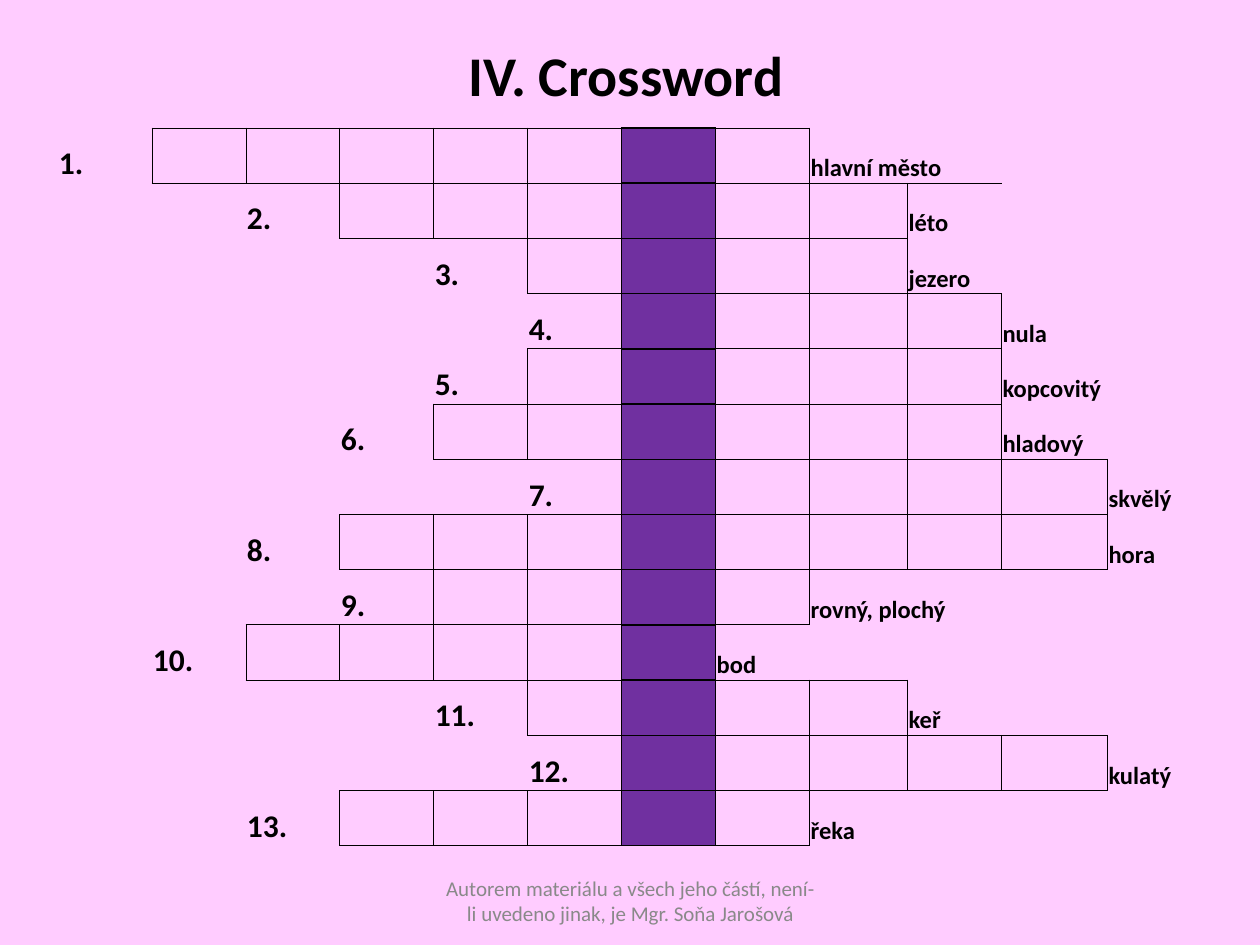
from lxml import etree
from pptx import Presentation
from pptx import util as u
from pptx.dml.color import RGBColor
from pptx.enum import text
from pptx.oxml import ns

COLORS = {"bg": "FFCCFF", "ink": "000000", "accent": "7030A0", "footer": "898989"}
FONT = "Calibri"
ACCENT_COL = 6
COL_WIDTHS = [94] * 8 + [98, 94, 106, 92]
TABLE_LEFT, TABLE_TOP, TABLE_HEIGHT = 58, 128, 718
ROWS = [
    (0, 8, "hlavní město"),
    (2, 9, "léto"),
    (4, 9, "jezero"),
    (5, 10, "nula"),
    (4, 10, "kopcovitý"),
    (3, 10, "hladový"),
    (5, 11, "skvělý"),
    (2, 11, "hora"),
    (3, 8, "rovný, plochý"),
    (1, 7, "bod"),
    (4, 9, "keř"),
    (5, 11, "kulatý"),
    (2, 8, "řeka"),
]
MERGED_ROWS = (0, 8)


def px(n):
    return u.Emu(round(n * 914400 / 126))


def color(name):
    return RGBColor.from_string(COLORS[name])


def add_run(p, content, size, name="ink", bold=True):
    r = p.add_run()
    r.text = content
    r.font.name = FONT
    r.font.size = u.Pt(size)
    r.font.bold = bold
    r.font.color.rgb = color(name)


def add_label(s, box, content, size, name, bold):
    sp = s.shapes.add_textbox(*map(px, box))
    tf = sp.text_frame
    tf.word_wrap = True
    tf.vertical_anchor = text.MSO_ANCHOR.MIDDLE
    p = tf.paragraphs[0]
    p.alignment = text.PP_ALIGN.CENTER
    add_run(p, content, size, name, bold)


def is_box(row, col):
    return 0 <= row < len(ROWS) and ROWS[row][0] < col < ROWS[row][1]


def edge_width(*cells):
    boxes = [col for row, col in cells if is_box(row, col)]
    if ACCENT_COL in boxes:
        return 1
    return 0.5 if boxes else 0


def set_border(cell, side, width):
    tcPr = cell._tc.get_or_add_tcPr()
    ln = etree.SubElement(tcPr, ns.qn("a:ln" + side), w=str(u.Pt(width)))
    if width:
        fill = etree.SubElement(ln, ns.qn("a:solidFill"))
        etree.SubElement(fill, ns.qn("a:srgbClr"), val=COLORS["ink"])
    else:
        etree.SubElement(ln, ns.qn("a:noFill"))


def format_cell(cell, row, col):
    cell.margin_left = cell.margin_right = cell.margin_top = px(1)
    cell.margin_bottom = 0
    cell.vertical_anchor = text.MSO_ANCHOR.BOTTOM
    neighbours = {
        "L": (row, col - 1),
        "R": (row, col + 1),
        "T": (row - 1, col),
        "B": (row + 1, col),
    }
    for side, neighbour in neighbours.items():
        set_border(cell, side, edge_width((row, col), neighbour))
    if col == ACCENT_COL:
        cell.fill.solid()
        cell.fill.fore_color.rgb = color("accent")
    else:
        cell.fill.background()


def add_crossword(s):
    frame = s.shapes.add_table(
        len(ROWS), len(COL_WIDTHS), px(TABLE_LEFT), px(TABLE_TOP),
        px(sum(COL_WIDTHS)), px(TABLE_HEIGHT))
    table = frame.table
    table.first_row = False
    table.horz_banding = False
    for column, width in zip(table.columns, COL_WIDTHS):
        column.width = px(width)
    for row, (number_col, clue_col, clue) in enumerate(ROWS):
        table.rows[row].height = px(TABLE_HEIGHT / len(ROWS))
        for col in range(len(COL_WIDTHS)):
            format_cell(table.cell(row, col), row, col)
        number = table.cell(row, number_col)
        add_run(number.text_frame.paragraphs[0], f"{row + 1}.", 18)
        answer = table.cell(row, clue_col)
        add_run(answer.text_frame.paragraphs[0], clue, 14)
        if row in MERGED_ROWS:
            answer.merge(table.cell(row, clue_col + 1))


def main():
    prs = Presentation()
    prs.slide_width, prs.slide_height = px(1260), px(945)
    s = prs.slides.add_slide(prs.slide_layouts[6])
    s.background.fill.solid()
    s.background.fill.fore_color.rgb = color("bg")
    add_label(s, (59, 29, 1134, 91), "IV. Crossword", 32, "ink", True)
    add_label(
        s, (431, 876, 399, 50),
        "Autorem materiálu a všech jeho částí, není-li uvedeno jinak, je Mgr. Soňa Jarošová",
        12, "footer", False)
    add_crossword(s)
    prs.save("out.pptx")


if __name__ == "__main__":
    main()
